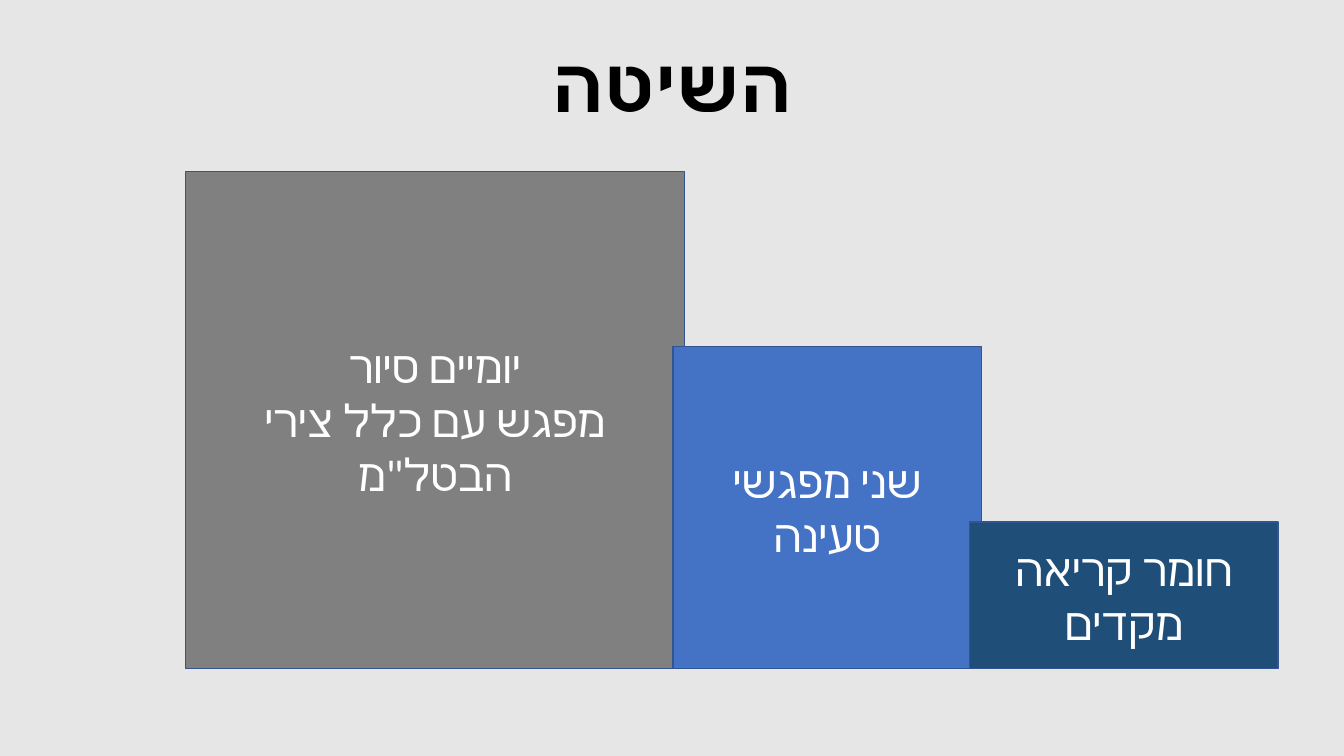
"""Build the method slide: three overlapping steps on a common floor."""
from dataclasses import dataclass

from lxml.etree import SubElement
from pptx import Presentation
from pptx.dml.color import RGBColor
from pptx.enum.shapes import MSO_SHAPE
from pptx.enum.text import MSO_ANCHOR, PP_ALIGN
from pptx.oxml.ns import qn
from pptx.slide import Slide
from pptx.text.text import TextFrame
from pptx.util import Inches, Pt

SLIDE_WIDTH = Inches(13.33)
SLIDE_HEIGHT = Inches(7.5)


@dataclass(frozen=True)
class Theme:
    """Colours, font and type sizes of the slide."""
    font: str = "Calibri"
    title_size: float = 54
    step_size: float = 32
    background: str = "E7E6E6"
    title: str = "000000"
    step_text: str = "FFFFFF"
    outline: str = "325491"
    tour: str = "808080"
    meetings: str = "4472C4"
    reading: str = "1F4E79"


@dataclass(frozen=True)
class Step:
    """One stair, its width given as a percentage of the slide."""
    lines: tuple[str, ...]
    width: float
    fill: str


THEME = Theme()
STEPS = (
    Step(("יומיים סיור", "מפגש עם כלל צירי הבטל\"מ"), 37.13, THEME.tour),
    Step(("שני מפגשי טעינה",), 22.95, THEME.meetings),
    Step(("חומר קריאה מקדים",), 22.95, THEME.reading),
)
STAIRS_LEFT = 13.8
STAIRS_FLOOR = 88.4
OVERLAP = 0.86
LOWEST_HEIGHT = 19.33
RISE = 23.2


def across(percent: float) -> int:
    """Convert a percentage of the slide width to a length."""
    return round(SLIDE_WIDTH * percent / 100)


def down(percent: float) -> int:
    """Convert a percentage of the slide height to a length."""
    return round(SLIDE_HEIGHT * percent / 100)


def write_hebrew(frame: TextFrame, lines: tuple[str, ...], size: float,
                 colour: str, bold: bool = False) -> None:
    """Fill a frame with centred right-to-left paragraphs."""
    frame.word_wrap = True
    frame.vertical_anchor = MSO_ANCHOR.MIDDLE
    frame.text = "\n".join(lines)
    for paragraph in frame.paragraphs:
        paragraph.alignment = PP_ALIGN.CENTER
        paragraph.font.name = THEME.font
        paragraph.font.size = Pt(size)
        paragraph.font.bold = bold
        paragraph.font.color.rgb = RGBColor.from_string(colour)
        properties = paragraph._p.get_or_add_pPr()
        properties.set("rtl", "1")
        SubElement(properties.find(qn("a:defRPr")), qn("a:cs"), typeface=THEME.font)


def draw_title(slide: Slide) -> None:
    """Write the heading above the stairs."""
    heading = slide.shapes.add_textbox(across(6.9), down(2), across(86.25), down(19.33))
    write_hebrew(heading.text_frame, ("השיטה",), THEME.title_size, THEME.title, bold=True)
    heading.text_frame.paragraphs[0].line_spacing = 0.9


def draw_step(slide: Slide, step: Step, left: float, height: float) -> None:
    """Draw one stair standing on the floor."""
    stair = slide.shapes.add_shape(
        MSO_SHAPE.RECTANGLE, across(left), down(STAIRS_FLOOR - height),
        across(step.width), down(height))
    stair.shadow.inherit = False
    stair.fill.solid()
    stair.fill.fore_color.rgb = RGBColor.from_string(step.fill)
    stair.line.color.rgb = RGBColor.from_string(THEME.outline)
    stair.line.width = Pt(1)
    write_hebrew(stair.text_frame, step.lines, THEME.step_size, THEME.step_text)


def main() -> None:
    """Assemble and save the slide."""
    presentation = Presentation()
    presentation.slide_width = SLIDE_WIDTH
    presentation.slide_height = SLIDE_HEIGHT
    slide = presentation.slides.add_slide(presentation.slide_layouts[6])
    slide.background.fill.solid()
    slide.background.fill.fore_color.rgb = RGBColor.from_string(THEME.background)
    draw_title(slide)
    left = STAIRS_LEFT
    for steps_below, step in zip(reversed(range(len(STEPS))), STEPS):
        draw_step(slide, step, left, LOWEST_HEIGHT + RISE * steps_below)
        left += step.width - OVERLAP
    presentation.save("out.pptx")


if __name__ == "__main__":
    main()
